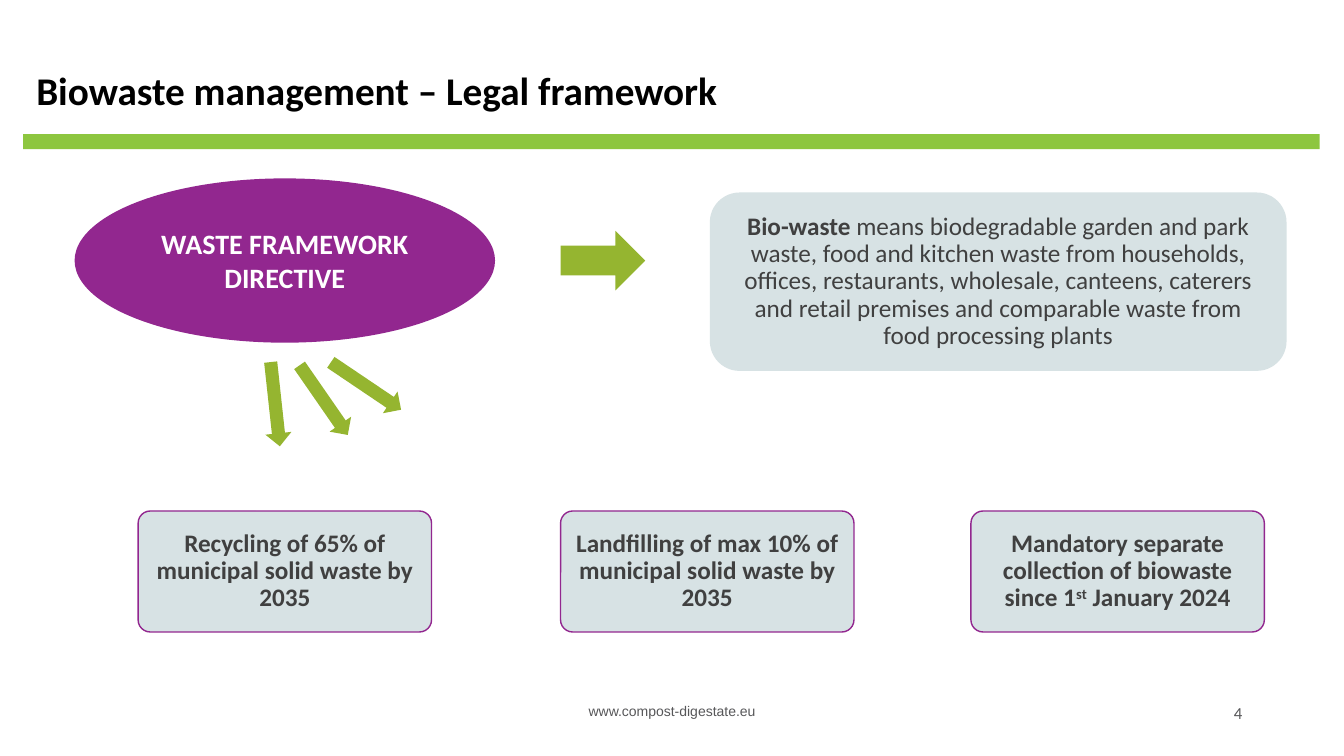
from dataclasses import dataclass

from pptx import Presentation
from pptx.dml.color import RGBColor
from pptx.enum.shapes import MSO_SHAPE
from pptx.enum.text import MSO_ANCHOR, PP_ALIGN
from pptx.util import Inches, Pt


@dataclass(frozen=True)
class Theme:
    green: str = "8DC63F"
    arrow: str = "95B530"
    purple: str = "92278F"
    panel: str = "D7E2E4"
    black: str = "000000"
    white: str = "FFFFFF"
    body: str = "404040"
    footer: str = "575759"
    font: str = "Calibri"
    footer_font: str = "Arial"
    title_size: int = 28
    heading_size: int = 20
    body_size: int = 18
    number_size: int = 12
    footer_size: int = 10


THEME = Theme()


def place(shape, left, top, width, height):
    shape.left, shape.top = Inches(left), Inches(top)
    shape.width, shape.height = Inches(width), Inches(height)


def write_text(shape, runs, size=THEME.body_size, color=THEME.body, font=THEME.font,
               align=PP_ALIGN.CENTER, anchor=MSO_ANCHOR.MIDDLE, spacing=None,
               inset=None, wrap=True):
    frame = shape.text_frame
    frame.word_wrap = wrap
    frame.vertical_anchor = anchor
    horizontal, vertical = (inset, inset) if inset else (0.1, 0.05)
    frame.margin_left = frame.margin_right = Inches(horizontal)
    frame.margin_top = frame.margin_bottom = Inches(vertical)
    paragraph = frame.paragraphs[0]
    paragraph.alignment = align
    if spacing:
        paragraph.line_spacing = spacing
    for text, bold, superscript in runs:
        run = paragraph.add_run()
        run.text = text
        run.font.name = font
        run.font.size = Pt(size)
        run.font.bold = bold
        run.font.color.rgb = RGBColor.from_string(color)
        if superscript:
            run.font._element.set("baseline", "30000")


def add_figure(slide, kind, box, fill, outline=None, rotation=0):
    shape = slide.shapes.add_shape(kind, *map(Inches, box))
    shape.shadow.inherit = False
    shape.rotation = rotation
    shape.fill.solid()
    shape.fill.fore_color.rgb = RGBColor.from_string(fill)
    if outline:
        shape.line.color.rgb = RGBColor.from_string(outline)
        shape.line.width = Pt(1)
    else:
        shape.line.fill.background()
    return shape


def add_panel(slide, box, runs, outline=None, corner=0.1667):
    panel = add_figure(slide, MSO_SHAPE.ROUNDED_RECTANGLE, box, THEME.panel, outline)
    panel.adjustments[0] = corner
    write_text(panel, runs, spacing=0.9, inset=0.11)


def add_label(slide, box, text, **text_format):
    label = slide.shapes.add_textbox(*map(Inches, box))
    write_text(label, [(text, False, False)], color=THEME.footer,
               anchor=MSO_ANCHOR.TOP, **text_format)


def main():
    presentation = Presentation()
    presentation.slide_width = Inches(13.33)
    presentation.slide_height = Inches(7.5)
    slide = presentation.slides.add_slide(presentation.slide_layouts[5])

    add_figure(slide, MSO_SHAPE.RECTANGLE, (0.23, 1.33, 12.86, 0.15), THEME.green)
    title = slide.shapes.title
    place(title, 0.26, 0.35, 12.15, 1.15)
    write_text(title, [("Biowaste management – Legal framework", True, False)],
               size=THEME.title_size, color=THEME.black, align=PP_ALIGN.LEFT, spacing=0.9)

    directive = add_figure(slide, MSO_SHAPE.OVAL, (0.74, 1.77, 4.17, 1.63), THEME.purple)
    write_text(directive, [("WASTE FRAMEWORK DIRECTIVE", True, False)],
               size=THEME.heading_size, color=THEME.white)
    add_panel(slide, (7.04, 1.91, 5.72, 1.77), [
        ("Bio-waste ", True, False),
        ("means biodegradable garden and park waste, food and kitchen waste from "
         "households, offices, restaurants, wholesale, canteens, caterers and retail "
         "premises and comparable waste from food processing plants", False, False),
    ])

    targets = [
        (1.37, [("Recycling of 65% of municipal solid waste by 2035", True, False)]),
        (5.56, [("Landfilling of max 10% of municipal solid waste by 2035", True, False)]),
        (9.63, [("Mandatory separate collection of biowaste since 1", True, False),
                ("st", True, True),
                (" January 2024", True, False)]),
    ]
    for left, runs in targets:
        add_panel(slide, (left, 5.07, 2.91, 1.2), runs, outline=THEME.purple, corner=0.1)

    arrows = [
        (5.56, 2.29, 0.59, 0),
        (2.31, 3.88, 0.26, 83.8),
        (2.79, 3.84, 0.26, 55.3),
        (3.21, 3.7, 0.26, 34),
    ]
    for left, top, height, rotation in arrows:
        add_figure(slide, MSO_SHAPE.RIGHT_ARROW, (left, top, 0.84, height),
                   THEME.arrow, rotation=rotation)

    add_label(slide, (5.47, 6.92, 2.39, 0.27), "www.compost-digestate.eu",
              size=THEME.footer_size, font=THEME.footer_font)
    add_label(slide, (9.42, 6.92, 3, 0.4), "4",
              size=THEME.number_size, align=PP_ALIGN.RIGHT)
    presentation.save("out.pptx")


if __name__ == "__main__":
    main()
